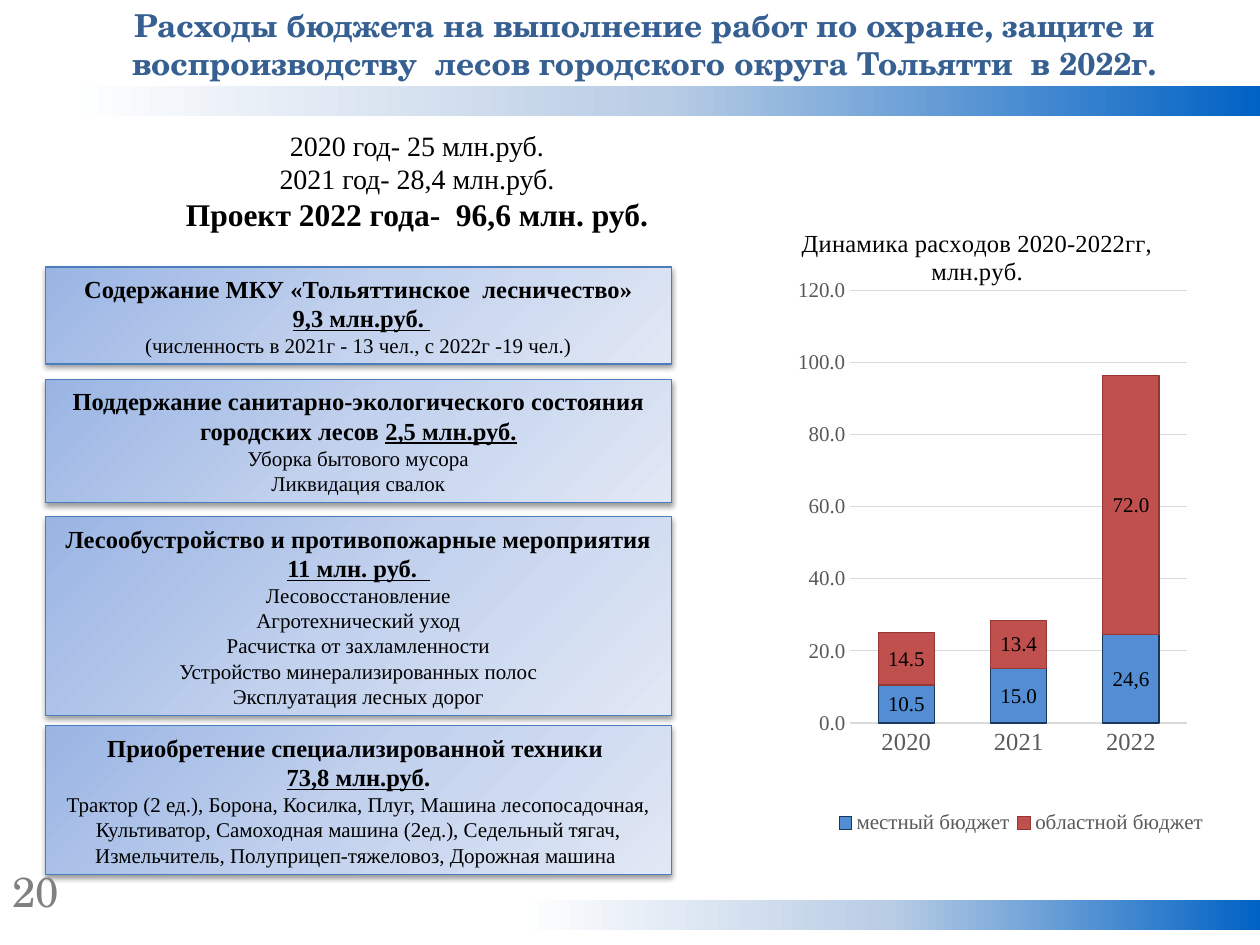
"""Build the slide on forestry budget spending in Tolyatti."""
import pptx
import pptx.chart.data
import pptx.dml.color
import pptx.enum.chart
import pptx.enum.shapes
import pptx.enum.text
import pptx.oxml
import pptx.util

Inches, Pt = pptx.util.Inches, pptx.util.Pt
MID = pptx.enum.text.MSO_ANCHOR.MIDDLE
CENTER = pptx.enum.text.PP_ALIGN.CENTER
NS = ('xmlns:a="http://schemas.openxmlformats.org/drawingml/2006/main" '
      'xmlns:c="http://schemas.openxmlformats.org/drawingml/2006/chart"')
SERIF, SCHOOL = "Times New Roman", "TeX Gyre Schola"

HEAD = ("Расходы бюджета на выполнение работ по охране, защите и "
        "воспроизводству  лесов городского округа Тольятти  в 2022г.")
TOTALS = [("2020 год- 25 млн.руб.", 16, False), ("2021 год- 28,4 млн.руб.", 16, False),
          ("Проект 2022 года-  96,6 млн. руб.", 18, True)]
BARS = [(0.51, 0.68), (4.1, 7.14)]
BLUES = [(0, "0062C4"), (50, "B9CDE5"), (100, "FFFFFF")]
PALES = [(0, "9AB5E4"), (50, "C2D1ED"), (100, "E1E8F5")]
LINEAR = '<a:lin ang="10800000" scaled="0"/>'
ROUND = '<a:path path="circle"><a:fillToRect r="100000" b="100000"/></a:path>'
SHADOW = ('<a:outerShdw blurRad="40000" dist="20000" dir="5400000" rotWithShape="0">'
          '<a:srgbClr val="000000"><a:alpha val="38000"/></a:srgbClr></a:outerShdw>')

# top, height, bold lines as (plain, underlined, plain), small lines
BOXES = [
    (2.12, 0.77, [("Содержание МКУ «Тольяттинское  лесничество»", "", ""),
                  (" ", "9,3 млн.руб. ", "")],
     ["(численность в 2021г - 13 чел., с 2022г -19 чел.)"]),
    (3.01, 0.98, [("Поддержание санитарно-экологического состояния городских лесов ",
                   "2,5 млн.руб.", "")],
     ["Уборка бытового мусора", "Ликвидация свалок"]),
    (4.1, 1.58, [("Лесообустройство и противопожарные мероприятия ", "11 млн. руб.  ", "")],
     ["Лесовосстановление", "Агротехнический уход", "Расчистка от захламленности",
      "Устройство минерализированных полос", "Эксплуатация лесных дорог"]),
    (5.76, 1.18, [("Приобретение специализированной техники ", "", ""),
                  ("", "73,8 млн.руб", ".")],
     ["Трактор (2 ед.), Борона, Косилка, Плуг, Машина лесопосадочная, "
      "Культиватор, Самоходная машина (2ед.), Седельный тягач, "
      "Измельчитель, Полуприцеп-тяжеловоз, Дорожная машина "]),
]
YEARS = ["2020", "2021", "2022"]
SERIES = [("местный бюджет", [10.5, 15.0, 24.5], "538ED5", "17375E"),
          ("областной бюджет", [14.5, 13.4, 72.0], "C0504D", "953735")]


def color(hue):
    return pptx.dml.color.RGBColor.from_string(hue)


def style(font, size, hue="000000", name=SERIF, bold=False):
    font.size, font.name, font.bold = Pt(size), name, bold
    font.color.rgb = color(hue)


def place(shape, *spot):
    shape.left, shape.top, shape.width, shape.height = map(Inches, spot)


def panel(slide, spot, stops, way):
    shape = slide.shapes.add_shape(pptx.enum.shapes.MSO_SHAPE.RECTANGLE, *map(Inches, spot))
    shape.shadow.inherit = False
    shape.line.fill.background()
    marks = "".join(f'<a:gs pos="{pos * 1000}"><a:srgbClr val="{hue}"/></a:gs>'
                    for pos, hue in stops)
    fill = pptx.oxml.parse_xml(
        f'<a:gradFill {NS} rotWithShape="1"><a:gsLst>{marks}</a:gsLst>{way}</a:gradFill>')
    shape.element.spPr.find(".//{*}prstGeom").addnext(fill)
    return shape


def add_box(slide, top, height, heads, items):
    box = panel(slide, (0.36, top, 4.97, height), PALES, ROUND)
    box.line.color.rgb, box.line.width = color("4B7EBC"), Pt(0.75)
    glow = pptx.oxml.parse_xml(f"<a:effectLst {NS}>{SHADOW}</a:effectLst>")
    old = box.element.spPr.find("{*}effectLst")
    old.getparent().replace(old, glow)
    frame = box.text_frame
    frame.word_wrap, frame.vertical_anchor = True, MID
    rows = [(parts, 14) for parts in heads] + [((item, "", ""), 12) for item in items]
    for i, (parts, size) in enumerate(rows):
        para = frame.add_paragraph() if i else frame.paragraphs[0]
        para.alignment = CENTER
        style(para.font, size, bold=size == 14)
        for k, text in enumerate(parts):
            if text:
                run = para.add_run()
                run.text = text
                if k == 1:
                    run.font.underline = True


def add_note(slide, spot, text, size, hue, bold=False, align=None):
    frame = slide.shapes.add_textbox(*map(Inches, spot)).text_frame
    frame.word_wrap = True
    para = frame.paragraphs[0]
    para.text, para.alignment = text, align
    style(para.font, size, hue, SCHOOL, bold)


def lay_out(part, index, inner, spot):
    for old in part.findall("{*}layout"):
        part.remove(old)
    target = '<c:layoutTarget val="inner"/>' if inner else ""
    modes = "".join(f'<c:{k}Mode val="edge"/>' for k in "xy")
    sizes = "".join(f'<c:{k} val="{v}"/>' for k, v in zip("xywh", spot))
    part.insert(index, pptx.oxml.parse_xml(
        f"<c:layout {NS}><c:manualLayout>{target}{modes}{sizes}</c:manualLayout></c:layout>"))


def add_graph(slide):
    kinds = pptx.enum.chart
    data = pptx.chart.data.CategoryChartData(number_format="0.0")
    data.categories = YEARS
    for name, vals, *_ in SERIES:
        data.add_series(name, vals)
    chart = slide.shapes.add_chart(kinds.XL_CHART_TYPE.COLUMN_STACKED,
                                   *map(Inches, (5.87, 1.62, 3.82, 5.28)), data).chart
    style(chart.font, 10, name="Calibri")
    chart.has_title = True
    frame = chart.chart_title.text_frame
    frame.text = "Динамика расходов 2020-2022гг, \nмлн.руб. "
    for para in frame.paragraphs:
        style(para.font, 14)
    chart.has_legend = True
    chart.legend.position = kinds.XL_LEGEND_POSITION.BOTTOM
    chart.legend.include_in_layout = False
    style(chart.legend.font, 12, "595959")
    for axis, size in ((chart.category_axis, 14), (chart.value_axis, 12)):
        axis.major_tick_mark = axis.minor_tick_mark = kinds.XL_TICK_MARK.NONE
        axis.format.line.fill.background()
        style(axis.tick_labels.font, size, "595959")
    value = chart.value_axis
    value.minimum_scale, value.maximum_scale, value.major_unit = 0, 120, 20
    value.tick_labels.number_format = "0.0"
    value.tick_labels.number_format_is_linked = False
    value.major_gridlines.format.line.color.rgb = color("D9D9D9")
    value.major_gridlines.format.line.width = Pt(0.75)
    plot = chart.plots[0]
    plot.gap_width, plot.overlap, plot.vary_by_categories = 100, 100, False
    for series, (_, _, hue, edge) in zip(plot.series, SERIES):
        series.format.fill.solid()
        series.format.fill.fore_color.rgb = color(hue)
        series.format.line.color.rgb, series.format.line.width = color(edge), Pt(0.75)
        labels = series.data_labels
        labels.show_value = True
        labels.number_format, labels.number_format_is_linked = "0.0", False
        style(labels.font, 12)
    tag = plot.series[0].points[2].data_label.text_frame
    tag.text = "24,6"
    style(tag.paragraphs[0].runs[0].font, 12)
    lay_out(chart.element.find(".//{*}plotArea"), 0, True, (0.23, 0.13, 0.7, 0.65))
    lay_out(chart.element.find(".//{*}legend"), 1, False, (0.19, 0.9, 0.79, 0.06))


def main():
    deck = pptx.Presentation()
    deck.slide_width, deck.slide_height = Inches(10), Inches(7.5)
    slide = deck.slides.add_slide(deck.slide_layouts[5])
    for left, top in BARS:
        panel(slide, (left, top, 10 - left, 0.24), BLUES, LINEAR)
    add_note(slide, (0.35, 0, 9.53, 0.71), HEAD, 18, "376092", True, CENTER)
    for box in BOXES:
        add_box(slide, *box)
    add_graph(slide)
    title = slide.shapes.title
    place(title, 1.3, 0.92, 4.02, 1.03)
    frame = title.text_frame
    frame.word_wrap, frame.vertical_anchor = True, MID
    for i, (text, size, bold) in enumerate(TOTALS):
        para = frame.add_paragraph() if i else frame.paragraphs[0]
        para.text, para.alignment = text, CENTER
        style(para.font, size, bold=bold)
    add_note(slide, (0, 6.82, 0.67, 0.5), "20", 24, "808080")
    deck.save("out.pptx")


if __name__ == "__main__":
    main()
